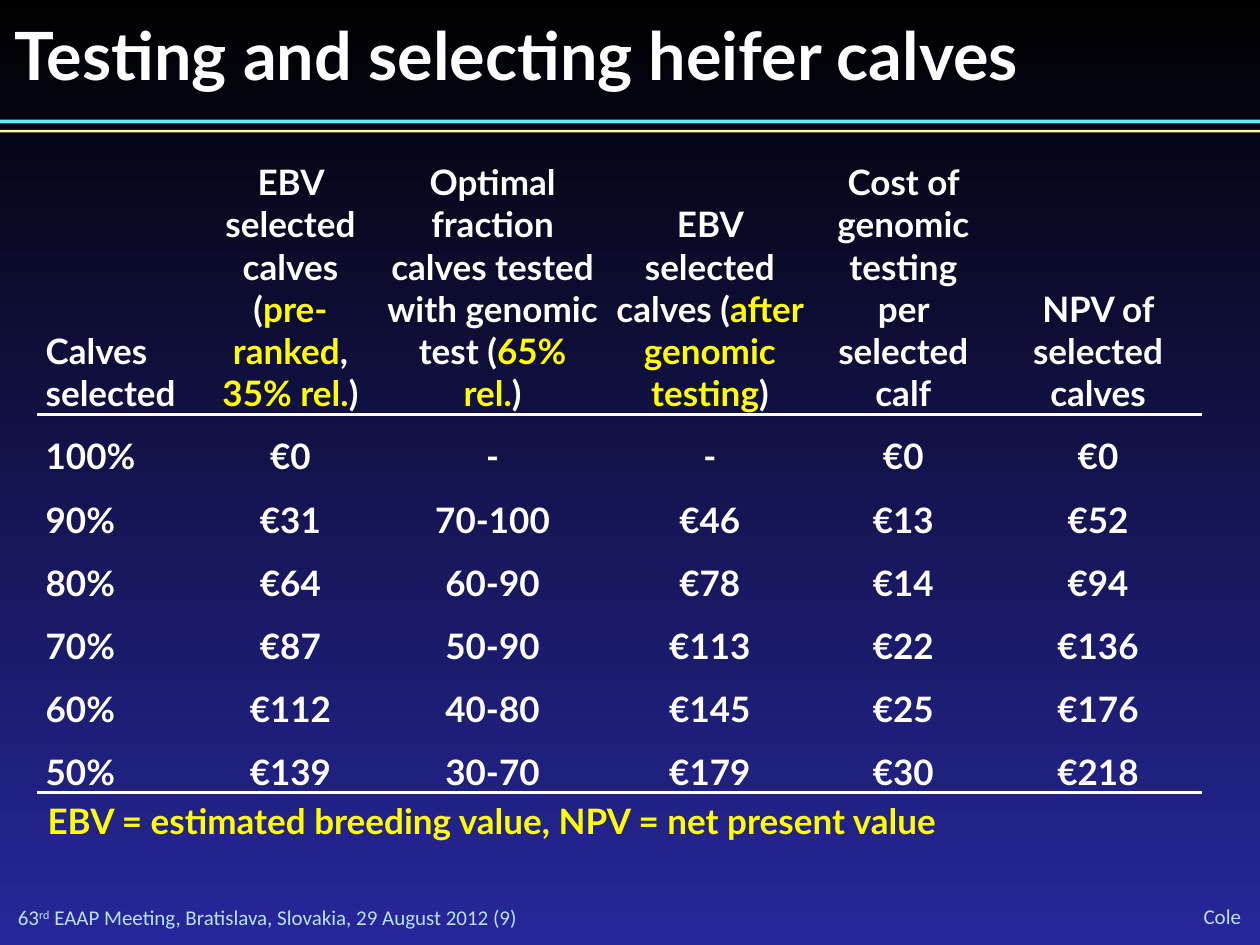
"""Build the slide on testing and selecting heifer calves."""
import lxml.etree
import pptx
import pptx.dml.color
import pptx.enum.text
import pptx.oxml.ns
import pptx.util

Cm = pptx.util.Cm
Pt = pptx.util.Pt
Align = pptx.enum.text.PP_ALIGN
Anchor = pptx.enum.text.MSO_ANCHOR

WHITE, YELLOW, PALE_BLUE = "FFFFFF", "FFFF00", "B8E2FF"
HEADING_FONT, FOOTER_FONT = "Lato", "Calibri"

TITLE = "Testing and selecting heifer calves"
NOTE = "EBV = estimated breeding value, NPV = net present value"
MEETING = [("63", 0), ("rd", 30), (" EAAP Meeting, Bratislava, Slovakia, 29 August 2012 (9)", 0)]
AUTHOR = [("Cole", 0)]

HEADERS = [
    [[("Calves selected", WHITE)]],
    [[("EBV selected calves (", WHITE), ("pre-ranked", YELLOW), (", ", WHITE),
      ("35% rel.", YELLOW), (")", WHITE)]],
    [[("Optimal", WHITE)],
     [("fraction calves tested with genomic test (", WHITE), ("65% rel.", YELLOW), (")", WHITE)]],
    [[("EBV selected calves (", WHITE), ("after genomic testing", YELLOW), (")", WHITE)]],
    [[("Cost of genomic testing per selected calf", WHITE)]],
    [[("NPV of selected calves", WHITE)]],
]
ROWS = [
    ("100%", "€0", "-", "-", "€0", "€0"),
    ("90%", "€31", "70-100", "€46", "€13", "€52"),
    ("80%", "€64", "60-90", "€78", "€14", "€94"),
    ("70%", "€87", "50-90", "€113", "€22", "€136"),
    ("60%", "€112", "40-80", "€145", "€25", "€176"),
    ("50%", "€139", "30-70", "€179", "€30", "€218"),
]
COLUMN_WIDTHS = [3.35, 3.53, 4.62, 4.14, 3.66, 4.19]
HEADER_HEIGHT, ROW_HEIGHT = 5.28, 1.27
RULES = [(2.41, 0.08, "5BEFFF"), (2.62, 0.05, "FFFF99")]


def colour(value):
    return pptx.dml.color.RGBColor.from_string(value)


def add_run(paragraph, text, size, value, font=HEADING_FONT, bold=True, baseline=0):
    run = paragraph.add_run()
    run.text = text
    run.font.size = Pt(size)
    run.font.name = font
    run.font.bold = bold
    run.font.color.rgb = colour(value)
    if baseline:
        run.font._element.set("baseline", str(baseline * 1000))


def clear_margins(frame):
    frame.margin_left = frame.margin_right = frame.margin_top = frame.margin_bottom = 0


def add_text_box(slide, left, top, width, height):
    frame = slide.shapes.add_textbox(Cm(left), Cm(top), Cm(width), Cm(height)).text_frame
    frame.word_wrap = True
    return frame


def add_footer(slide, left, top, width, height, runs, alignment):
    frame = add_text_box(slide, left, top, width, height)
    clear_margins(frame)
    frame.vertical_anchor = Anchor.MIDDLE
    paragraph = frame.paragraphs[0]
    paragraph.alignment = alignment
    for text, baseline in runs:
        add_run(paragraph, text, 12, PALE_BLUE, FOOTER_FONT, False, baseline)


def set_borders(cell, ruled_sides):
    properties = cell._tc.get_or_add_tcPr()
    qn = pptx.oxml.ns.qn
    for index, side in enumerate("LRTB"):
        line = lxml.etree.Element(qn(f"a:ln{side}"))
        if side in ruled_sides:
            line.set("w", str(Pt(2.25)))
            fill = lxml.etree.SubElement(line, qn("a:solidFill"))
            lxml.etree.SubElement(fill, qn("a:srgbClr")).set("val", WHITE)
        else:
            lxml.etree.SubElement(line, qn("a:noFill"))
        properties.insert(index, line)


def fill_cell(cell, paragraphs, alignment, line_spacing, anchor, ruled_sides):
    cell.fill.background()
    cell.margin_left = cell.margin_right = Cm(0.18)
    cell.margin_top = cell.margin_bottom = 0
    cell.vertical_anchor = anchor
    set_borders(cell, ruled_sides)
    frame = cell.text_frame
    for index, runs in enumerate(paragraphs):
        paragraph = frame.add_paragraph() if index else frame.paragraphs[0]
        paragraph.alignment = alignment
        paragraph.line_spacing = line_spacing
        for text, value in runs:
            add_run(paragraph, text, 20, value)


def add_calf_table(slide):
    height = HEADER_HEIGHT + ROW_HEIGHT * len(ROWS)
    table = slide.shapes.add_table(len(ROWS) + 1, len(HEADERS), Cm(0.74), Cm(3.07),
                                   Cm(sum(COLUMN_WIDTHS)), Cm(height)).table
    table.first_row = table.horz_banding = False
    for column, width in zip(table.columns, COLUMN_WIDTHS):
        column.width = Cm(width)
    for index, row in enumerate(table.rows):
        row.height = Cm(ROW_HEIGHT if index else HEADER_HEIGHT)
    body = [[[[(text, WHITE)]] for text in row] for row in ROWS]
    ruled_sides = {0: "B", 1: "T", len(ROWS): "B"}
    for row_index, row in enumerate([HEADERS] + body):
        for column_index, paragraphs in enumerate(row):
            fill_cell(table.cell(row_index, column_index), paragraphs,
                      Align.CENTER if column_index else Align.LEFT,
                      1.5 if row_index else 1.0,
                      Anchor.TOP if row_index else Anchor.BOTTOM,
                      ruled_sides.get(row_index, ""))


def main():
    presentation = pptx.Presentation()
    presentation.slide_width, presentation.slide_height = Cm(25.4), Cm(19.05)
    slide = presentation.slides.add_slide(presentation.slide_layouts[5])

    background = slide.background.fill
    background.gradient()
    background.gradient_angle = 270
    for stop, value in zip(background.gradient_stops, ("000000", "27279B")):
        stop.color.rgb = colour(value)

    for top, height, value in RULES:
        rule = slide.shapes.add_shape(pptx.enum.shapes.MSO_SHAPE.RECTANGLE, 0, Cm(top),
                                      presentation.slide_width, Cm(height))
        rule.shadow.inherit = False
        rule.fill.solid()
        rule.fill.fore_color.rgb = colour(value)
        rule.line.fill.background()

    add_footer(slide, 0.36, 18.24, 13.26, 0.51, MEETING, Align.LEFT)
    add_footer(slide, 22.15, 18.21, 2.87, 0.53, AUTHOR, Align.RIGHT)
    add_calf_table(slide)

    title = slide.shapes.title
    title.left, title.top, title.width, title.height = Cm(0.3), Cm(0.28), Cm(24.61), Cm(1.63)
    frame = title.text_frame
    clear_margins(frame)
    frame.vertical_anchor = Anchor.TOP
    frame.auto_size = pptx.enum.text.MSO_AUTO_SIZE.NONE
    frame.paragraphs[0].alignment = Align.LEFT
    add_run(frame.paragraphs[0], TITLE, 38, WHITE)

    note = add_text_box(slide, 0.71, 16, 23.93, 1.12)
    add_run(note.paragraphs[0], NOTE, 20, YELLOW)
    presentation.save("out.pptx")


if __name__ == "__main__":
    main()
